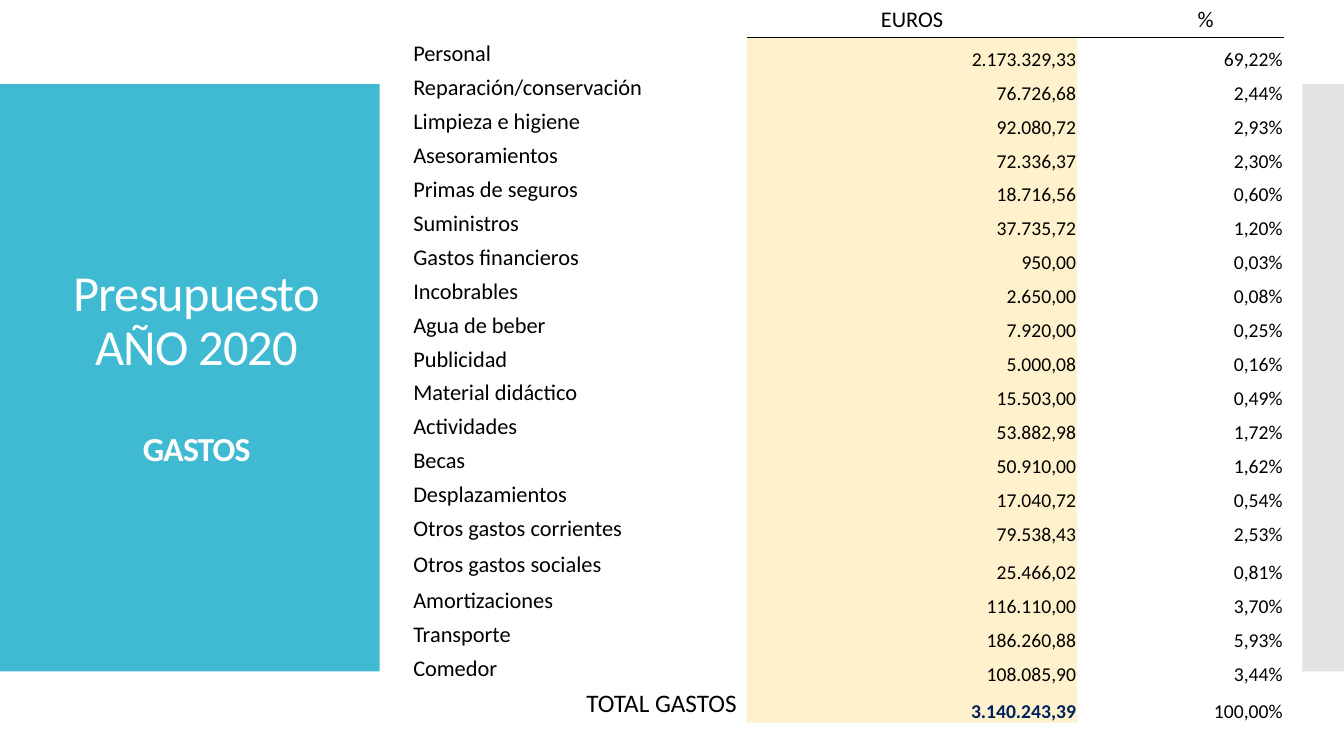
import pptx
import pptx.util
import pptx.dml.color
import pptx.enum.shapes
import pptx.enum.text
import pptx.oxml
from lxml import etree

Pt = pptx.util.Pt
ALIGN = pptx.enum.text.PP_ALIGN
ANCHOR = pptx.enum.text.MSO_ANCHOR
NS = "http://schemas.openxmlformats.org/drawingml/2006/main"
FONT = "Calibri"
COLORS = {"teal": "40BAD2", "grey": "C8C8C8", "cream": "FFF1CB",
          "navy": "002060", "black": "000000", "white": "FFFFFF"}
NO_STYLE = "{2D5ABB26-0587-4C30-8999-92F81FD0307C}"
COLUMNS = [238.5 + 7, 236, 36, 111.5]
HEADER_H, ROW_H, SOCIAL_H, TOTAL_H = 26.8, 24.25, 27.2, 26.4
EXPENSES = [
    ("Personal", "2.173.329,33", "69,22%"),
    ("Reparación/conservación", "76.726,68", "2,44%"),
    ("Limpieza e higiene", "92.080,72", "2,93%"),
    ("Asesoramientos", "72.336,37", "2,30%"),
    ("Primas de seguros", "18.716,56", "0,60%"),
    ("Suministros", "37.735,72", "1,20%"),
    ("Gastos financieros", "950,00", "0,03%"),
    ("Incobrables", "2.650,00", "0,08%"),
    ("Agua de beber", "7.920,00", "0,25%"),
    ("Publicidad", "5.000,08", "0,16%"),
    ("Material didáctico", "15.503,00", "0,49%"),
    ("Actividades", "53.882,98", "1,72%"),
    ("Becas", "50.910,00", "1,62%"),
    ("Desplazamientos", "17.040,72", "0,54%"),
    ("Otros gastos corrientes", "79.538,43", "2,53%"),
    ("Otros gastos sociales", "25.466,02", "0,81%"),
    ("Amortizaciones", "116.110,00", "3,70%"),
    ("Transporte", "186.260,88", "5,93%"),
    ("Comedor", "108.085,90", "3,44%"),
    ("TOTAL GASTOS", "3.140.243,39", "100,00%"),
]


def rgb(name):
    """Return the named colour."""
    return pptx.dml.color.RGBColor.from_string(COLORS[name])


def style(p, size, color, align, spacing=1.0, bold=False):
    """Set the font and layout of a paragraph."""
    p.font.name, p.font.size, p.font.bold = FONT, Pt(size), bold
    p.font.color.rgb = rgb(color)
    p.alignment, p.line_spacing = align, spacing


def add_panel(s, x, w, color, alpha=100):
    """Add a full-colour side panel."""
    sp = s.shapes.add_shape(pptx.enum.shapes.MSO_SHAPE.RECTANGLE, Pt(x), Pt(60), Pt(w), Pt(419.5))
    sp.shadow.inherit = False
    sp.fill.solid()
    sp.fill.fore_color.rgb = rgb(color)
    sp.line.fill.background()
    if alpha < 100:
        clr = sp.fill._xPr.find(f".//{{{NS}}}srgbClr")
        etree.SubElement(clr, f"{{{NS}}}alpha", val=str(alpha * 1000))


def add_title(s):
    """Add the slide title and its subtitle."""
    tf = s.shapes.add_textbox(Pt(24.5), Pt(82), Pt(232), Pt(362)).text_frame
    tf.word_wrap, tf.vertical_anchor = True, ANCHOR.MIDDLE
    p = tf.paragraphs[0]
    p.text = "Presupuesto\vAÑO 2020"
    style(p, 36, "white", ALIGN.CENTER, 0.9)
    sub = tf.add_paragraph()
    sub.text = "GASTOS"
    style(sub, 24, "white", ALIGN.CENTER, 0.9, True)
    sub.space_before = Pt(39.5)
    for r in p.runs + sub.runs:
        r.font._element.set("spc", "-60")


def fill_cell(cell, text, size, align, anchor, spacing=1.0, color="black", bold=False):
    """Write text into a table cell."""
    cell.text, cell.vertical_anchor = text, anchor
    style(cell.text_frame.paragraphs[0], size, color, align, spacing, bold)


def tighten(cell):
    """Reduce the cell margins to almost nothing."""
    cell.margin_left = cell.margin_right = cell.margin_top = Pt(0.75)
    cell.margin_bottom = 0


def underline(cell):
    """Draw a black bottom border."""
    cell._tc.get_or_add_tcPr().insert(0, pptx.oxml.parse_xml(
        f'<a:lnB xmlns:a="{NS}" w="12700"><a:solidFill>'
        f'<a:srgbClr val="{COLORS["black"]}"/></a:solidFill></a:lnB>'))


def add_budget(s):
    """Add the table of expenses."""
    n = len(EXPENSES)
    heights = [HEADER_H] + [ROW_H] * (n - 1) + [TOTAL_H]
    heights[16] = SOCIAL_H
    tbl = s.shapes.add_table(n + 1, 4, Pt(288), 0, Pt(sum(COLUMNS)), Pt(sum(heights))).table
    tbl.first_row = tbl.horz_banding = False
    tbl._tbl.tblPr.find(f"{{{NS}}}tableStyleId").text = NO_STYLE
    for col, w in zip(tbl.columns, COLUMNS):
        col.width = Pt(w)
    for row, h in zip(tbl.rows, heights):
        row.height = Pt(h)
        tighten(row.cells[2])
    tighten(tbl.cell(0, 0))
    for c, text in ((1, "EUROS"), (3, "%")):
        fill_cell(tbl.cell(0, c), text, 16, ALIGN.CENTER, ANCHOR.BOTTOM, 0.87)
    for c in (1, 2, 3):
        underline(tbl.cell(0, c))
    for i, (name, euros, share) in enumerate(EXPENSES, 1):
        total = i == n
        label, amount, _, percent = tbl.rows[i].cells
        if total:
            fill_cell(label, name, 18, ALIGN.RIGHT, ANCHOR.BOTTOM, 0.87)
        else:
            fill_cell(label, name, 16, ALIGN.LEFT, ANCHOR.MIDDLE, 0.87)
        fill_cell(amount, euros, 14, ALIGN.RIGHT, ANCHOR.BOTTOM,
                  color="navy" if total else "black", bold=total)
        fill_cell(percent, share, 14, ALIGN.RIGHT, ANCHOR.BOTTOM)
        tighten(amount)
        tighten(percent)
        amount.fill.solid()
        amount.fill.fore_color.rgb = rgb("cream")


def main():
    """Build and save the slide."""
    prs = pptx.Presentation()
    prs.slide_width, prs.slide_height = Pt(960), Pt(540)
    s = prs.slides.add_slide(prs.slide_layouts[6])
    add_panel(s, 0, 271.25, "teal")
    add_panel(s, 930.25, 29.75, "grey", 50)
    add_title(s)
    add_budget(s)
    prs.save("out.pptx")


if __name__ == "__main__":
    main()
